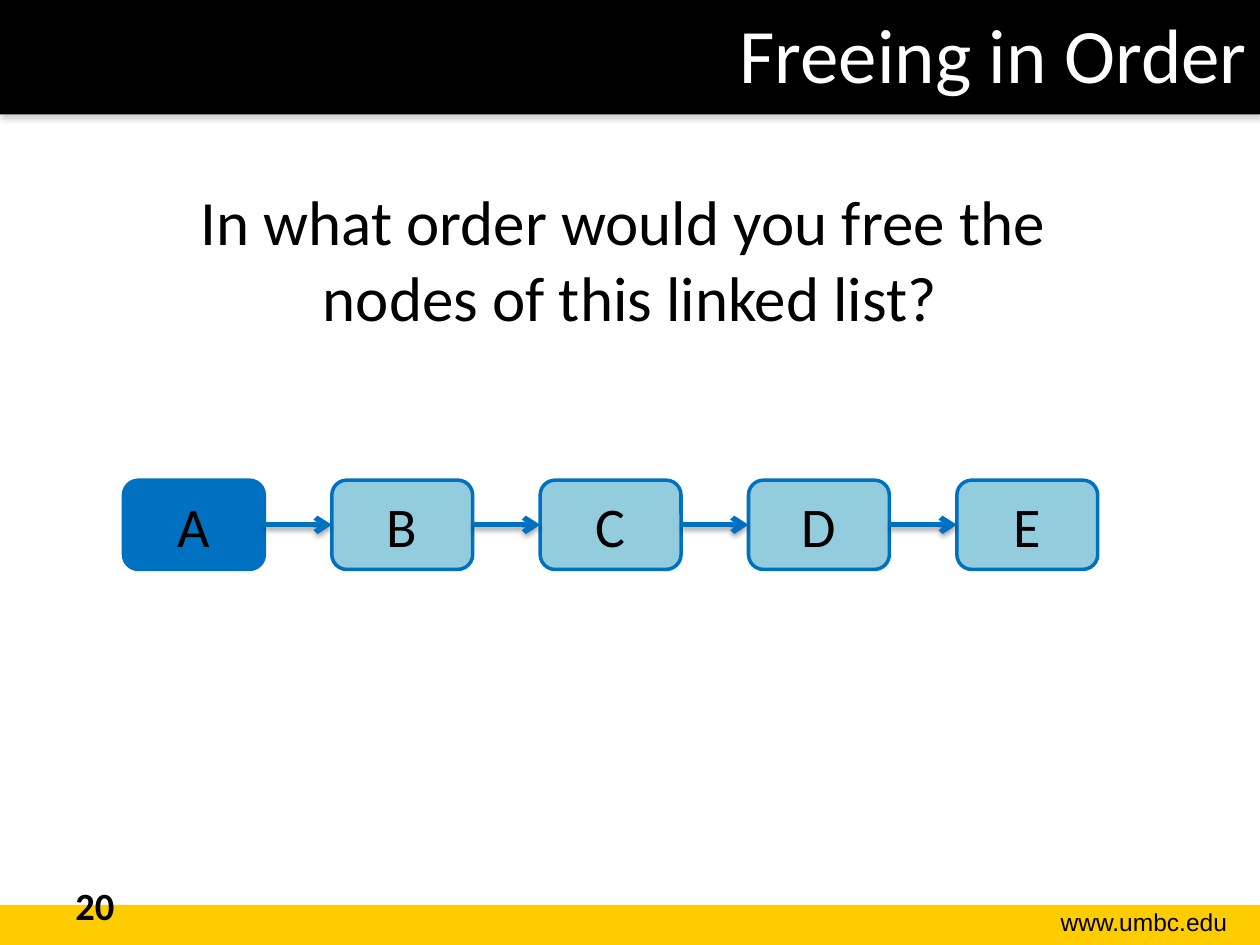
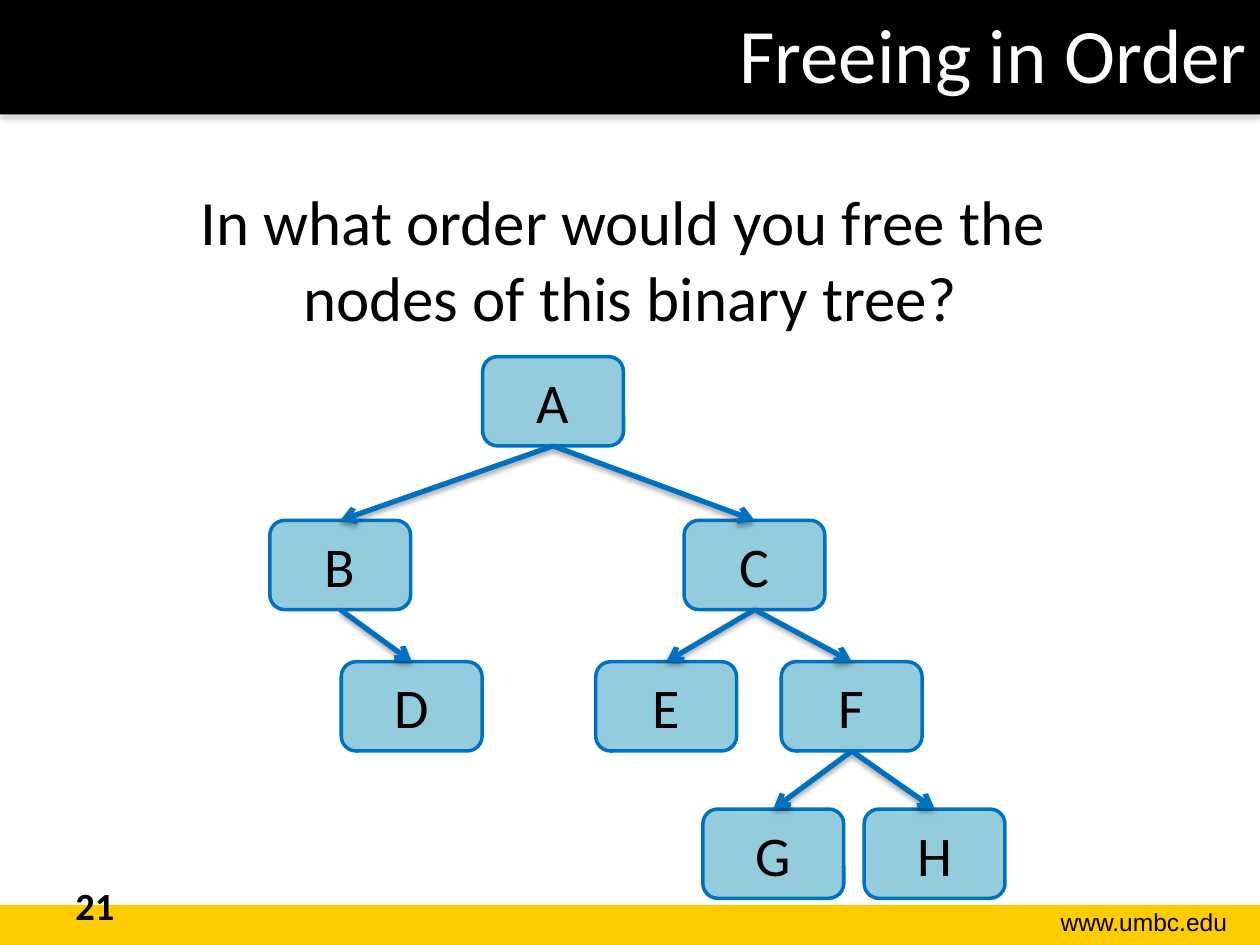
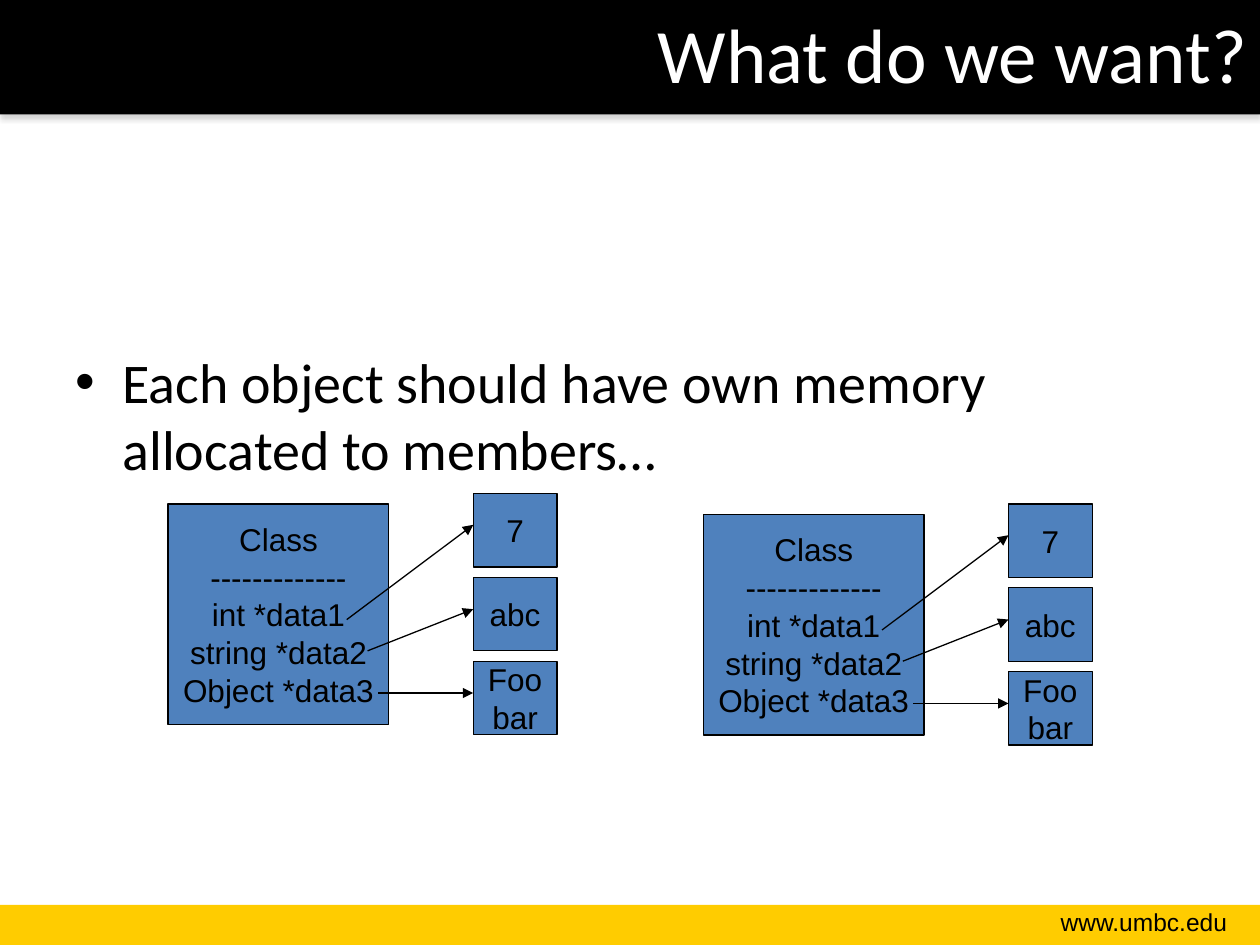
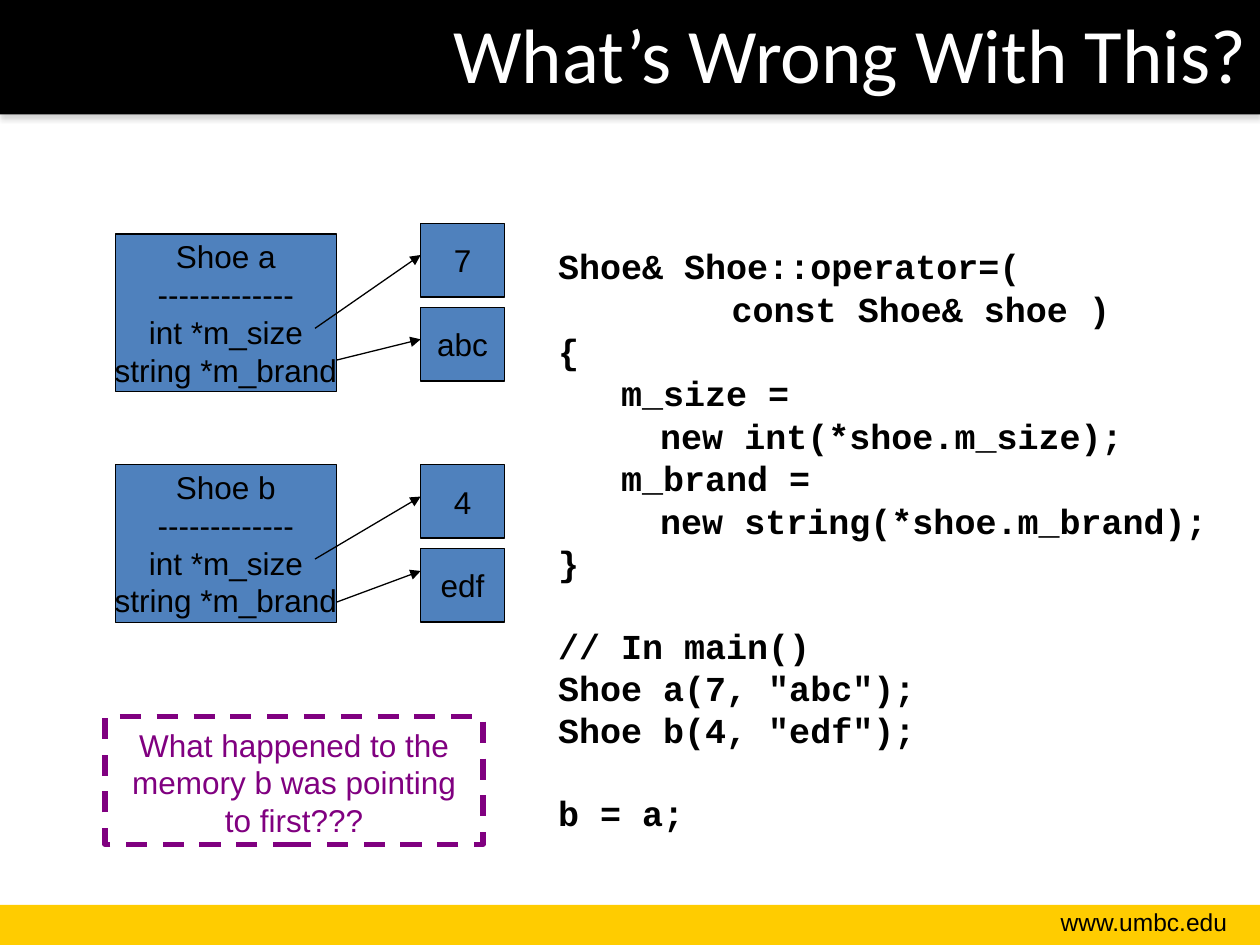
import lxml.etree
import pptx
import pptx.dml.color
import pptx.enum.dml
import pptx.enum.shapes
import pptx.enum.text
import pptx.oxml
import pptx.oxml.ns
import pptx.util

Cm, Pt = pptx.util.Cm, pptx.util.Pt
SHAPE = pptx.enum.shapes.MSO_SHAPE
ALIGN = pptx.enum.text.PP_ALIGN
ANCHOR = pptx.enum.text.MSO_ANCHOR
qn = pptx.oxml.ns.qn

# Shared look
W, H = 25.4, 19.05
BLACK, WHITE, GOLD, GRAY = "000000", "FFFFFF", "FFCC00", "808080"
BLUE, SKY, STEEL, PURPLE = "0070C0", "93CDDD", "4F81BD", "800080"

TITLE = {"name": "Calibri", "size": Pt(44), "color": WHITE}
QUESTION = {"name": "Calibri", "size": Pt(36), "color": BLACK}
BULLET = {"name": "Calibri", "size": Pt(32), "color": BLACK}
NODE = {"name": "Calibri", "size": Pt(32), "color": BLACK}
NUMBER = {"name": "Calibri", "size": Pt(22), "bold": True, "color": BLACK}
FOOTER = {"name": "Arial", "size": Pt(14), "color": BLACK}
MEMORY = {"name": "Arial", "size": Pt(18), "color": BLACK}
REMARK = {"name": "Arial", "size": Pt(18), "color": PURPLE}
CODE = {"name": "Courier New", "size": Pt(20), "bold": True, "color": BLACK}

# Content: linked list and tree (left, top of each node in cm)
NODE_W, NODE_H = 2.84, 1.8
LIST_QUESTION = "In what order would you free the \nnodes of this linked list?"
LIST_NODES = {name: (2.49 + 4.2 * i, 9.68) for i, name in enumerate("ABCDE")}
LIST_EDGES = ["AB", "BC", "CD", "DE"]

TREE_QUESTION = "In what order would you free the \nnodes of this binary tree?"
TREE_NODES = {
    "A": (9.73, 7.19),
    "B": (5.44, 10.49), "C": (13.79, 10.49),
    "D": (6.88, 13.34), "E": (12.01, 13.34), "F": (15.75, 13.34),
    "G": (14.17, 16.31), "H": (17.42, 16.31),
}
TREE_EDGES = ["AB", "AC", "BD", "CE", "CF", "FG", "FH"]

# Content: objects and the memory they point to.
# Arrows are (start x, start y, end y) from the corner of the object.
OBJECT_W, CELL_DX, CELL_W, CELL_H, CELL_STEP = 4.45, 6.15, 1.69, 1.48, 1.69
WANT_TEXT = "Each object should have own memory allocated to members…"
CLASS = {
    "lines": ["Class", "-------------", "int *data1", "string *data2", "Object *data3"],
    "height": 4.45,
    "cells": [["7"], ["abc"], ["Foo", "bar"]],
    "cell_dy": -0.21,
    "arrows": [(3.6, 2.33, 0.42), (4.02, 2.96, 2.12), (4.23, 3.81, 3.81)],
}
CLASS_PLACES = [(3.39, 10.16), (14.18, 10.37)]

SHOE_MEMBERS = ["-------------", "int *m_size", "string *m_brand"]
SHOES = [
    ((2.33, 4.72), {
        "lines": ["Shoe a"] + SHOE_MEMBERS, "height": 3.18,
        "cells": [["7"], ["abc"]], "cell_dy": -0.21,
        "arrows": [(4.02, 1.9, 0.42), (4.45, 2.54, 2.12)]}),
    ((2.33, 9.37), {
        "lines": ["Shoe b"] + SHOE_MEMBERS, "height": 3.18,
        "cells": [["4"], ["edf"]], "cell_dy": 0,
        "arrows": [(4.02, 1.9, 0.64), (4.45, 2.77, 2.14)]}),
]
REMARK_TEXT = "What happened to the memory b was pointing to first???"

# Code lines: text, indent in cm, space before in points
LINE_GAP, BLOCK_GAP = 5, 28
CODE_LINES = [
    ("Shoe& Shoe::operator=(", 0, 0),
    ("const Shoe& shoe )", 3.5, LINE_GAP),
    ("{", 0, LINE_GAP),
    ("m_size =", 1.27, LINE_GAP),
    ("new int(*shoe.m_size);", 2.06, LINE_GAP),
    ("m_brand =", 1.27, LINE_GAP),
    ("new string(*shoe.m_brand);", 2.06, LINE_GAP),
    ("}", 0, LINE_GAP),
    ("// In main()", 0, BLOCK_GAP),
    ('Shoe a(7, "abc");', 0, LINE_GAP),
    ('Shoe b(4, "edf");', 0, LINE_GAP),
    ("b = a;", 0, BLOCK_GAP),
]


def rgb(value):
    return pptx.dml.color.RGBColor.from_string(value)


def set_effects(sp, shadow=None):
    """Replace the inherited effects by none, or by a soft shadow below."""
    effects = lxml.etree.SubElement(sp.element.spPr, qn("a:effectLst"))
    if shadow:
        outer = lxml.etree.SubElement(
            effects, qn("a:outerShdw"), blurRad=str(Pt(3.1)), dist=str(Pt(1.8)),
            dir="5400000", rotWithShape="0")
        color = lxml.etree.SubElement(outer, qn("a:srgbClr"), val=shadow)
        lxml.etree.SubElement(color, qn("a:alpha"), val="35000")


def write(tf, lines, fmt, align=ALIGN.LEFT, **frame):
    """Fill a text frame, one paragraph a line; frame holds its attributes."""
    for key, value in {"word_wrap": True, **frame}.items():
        setattr(tf, key, value)
    for i, line in enumerate(lines):
        p = tf.paragraphs[0] if i == 0 else tf.add_paragraph()
        p.text = line
        p.alignment = align
        for r in p.runs:
            for key, value in fmt.items():
                if key == "color":
                    r.font.color.rgb = rgb(value)
                else:
                    setattr(r.font, key, value)
    return tf


def set_indent(p, left, hanging=0, bullet=None):
    pPr = p._p.get_or_add_pPr()
    pPr.set("marL", str(Cm(left)))
    pPr.set("indent", str(-Cm(hanging)))
    if bullet:
        lxml.etree.SubElement(pPr, qn("a:buFont"), typeface="Arial")
        lxml.etree.SubElement(pPr, qn("a:buChar"), char=bullet)


def add_text(s, box, lines, fmt, **options):
    sp = s.shapes.add_textbox(*map(Cm, box))
    write(sp.text_frame, lines, fmt, **options)
    return sp


def add_box(s, kind, box, fill=None, line=None, width=0.75, shadow=None):
    sp = s.shapes.add_shape(kind, *map(Cm, box))
    if fill:
        sp.fill.solid()
        sp.fill.fore_color.rgb = rgb(fill)
    else:
        sp.fill.background()
    if line:
        sp.line.color.rgb = rgb(line)
        sp.line.width = Pt(width)
    else:
        sp.line.fill.background()
    set_effects(sp, shadow)
    return sp


def add_arrow(s, ends, color, width, head, shadow=None):
    sp = s.shapes.add_connector(pptx.enum.shapes.MSO_CONNECTOR.STRAIGHT, *map(Cm, ends))
    sp.line.color.rgb = rgb(color)
    sp.line.width = Pt(width)
    lxml.etree.SubElement(sp.line._get_or_add_ln(), qn("a:tailEnd"), type=head)
    set_effects(sp, shadow)
    return sp


def add_bands(s):
    """Draw the bands and footer, then hand them to the layout."""
    parts = [
        add_box(s, SHAPE.RECTANGLE, (0, 18.24, W, 0.81), GOLD),
        add_box(s, SHAPE.RECTANGLE, (0, 0, W, 2.31), BLACK, shadow=GRAY),
        add_text(s, (19.94, 18.16, 5.05, 0.86), ["www.umbc.edu"], FOOTER, align=ALIGN.RIGHT),
    ]
    for i, sp in enumerate(parts):
        sp.element.nvSpPr.cNvPr.set("id", str(20 + i))
        s.slide_layout.shapes.element.append(sp.element)


def add_slide(prs, title):
    s = prs.slides.add_slide(prs.slide_layouts[5])
    sp = s.shapes.title
    sp.left, sp.top, sp.width, sp.height = map(Cm, (2.54, 0, 22.86, 3.18))
    write(sp.text_frame, [title], TITLE, ALIGN.RIGHT, vertical_anchor=ANCHOR.TOP,
          auto_size=pptx.enum.text.MSO_AUTO_SIZE.NONE)
    return s


def add_graph(s, question, number, nodes, edges, sites, first_fill=SKY):
    """Draw a question and its nodes; sites are the joined sides."""
    add_text(s, (1.27, 3.56, 22.86, 13.18), [question], QUESTION, align=ALIGN.CENTER)
    add_text(s, (1.27, 17.65, 5.92, 1.02), [number], NUMBER)
    boxes = {}
    for name, place in nodes.items():
        fill = SKY if boxes else first_fill
        sp = add_box(s, SHAPE.ROUNDED_RECTANGLE, (*place, NODE_W, NODE_H), fill, BLUE, 2)
        write(sp.text_frame, [name], NODE, ALIGN.CENTER, vertical_anchor=ANCHOR.MIDDLE)
        boxes[name] = sp
    for start, end in edges:
        arrow = add_arrow(s, (0, 0, 0, 0), BLUE, 3, "arrow", BLACK)
        arrow.begin_connect(boxes[start], sites[0])
        arrow.end_connect(boxes[end], sites[1])


def add_object(s, place, obj):
    """Draw an object, its memory cells and the pointers between them."""
    x, y = place
    parts = [((x, y, OBJECT_W, obj["height"]), obj["lines"])]
    for i, lines in enumerate(obj["cells"]):
        top = y + obj["cell_dy"] + i * CELL_STEP
        parts.append(((x + CELL_DX, top, CELL_W, CELL_H), lines))
    for box, lines in parts:
        sp = add_box(s, SHAPE.RECTANGLE, box, STEEL, BLACK)
        write(sp.text_frame, lines, MEMORY, ALIGN.CENTER, word_wrap=False,
              vertical_anchor=ANCHOR.MIDDLE)
    for dx, dy, end_dy in obj["arrows"]:
        add_arrow(s, (x + dx, y + dy, x + CELL_DX, y + end_dy), BLACK, 0.75, "triangle")


def main():
    prs = pptx.Presentation()
    prs.slide_width, prs.slide_height = Cm(W), Cm(H)

    # Linked list
    s = add_slide(prs, "Freeing in Order")
    add_bands(s)
    add_graph(s, LIST_QUESTION, "20", LIST_NODES, LIST_EDGES, (3, 1), BLUE)

    # Binary tree
    s = add_slide(prs, "Freeing in Order")
    add_graph(s, TREE_QUESTION, "21", TREE_NODES, TREE_EDGES, (2, 0))

    # Own memory for each object
    s = add_slide(prs, "What do we want?")
    sp = add_text(s, (1.27, 3.84, 22.86, 13.18), [WANT_TEXT], BULLET, margin_top=Cm(3.17))
    set_indent(sp.text_frame.paragraphs[0], 0.95, 0.95, "•")
    for place in CLASS_PLACES:
        add_object(s, place, CLASS)

    # Faulty assignment operator
    s = add_slide(prs, "What’s Wrong With This?")
    sp = add_text(s, (11, 4.83, 13.61, 11.23), [line[0] for line in CODE_LINES], CODE,
                  margin_top=Cm(0.27))
    for p, (_, left, gap) in zip(sp.text_frame.paragraphs, CODE_LINES):
        p.line_spacing = 0.8
        p.space_before = Pt(gap)
        set_indent(p, left)
    for place, shoe in SHOES:
        add_object(s, place, shoe)
    sp = add_box(s, SHAPE.RECTANGLE, (2.12, 14.45, 7.62, 2.57), None, PURPLE, 3)
    sp.line.dash_style = pptx.enum.dml.MSO_LINE.DASH
    write(sp.text_frame, [REMARK_TEXT], REMARK, ALIGN.CENTER,
          vertical_anchor=ANCHOR.TOP, margin_top=Cm(0.18))

    prs.save("out.pptx")


if __name__ == "__main__":
    main()
